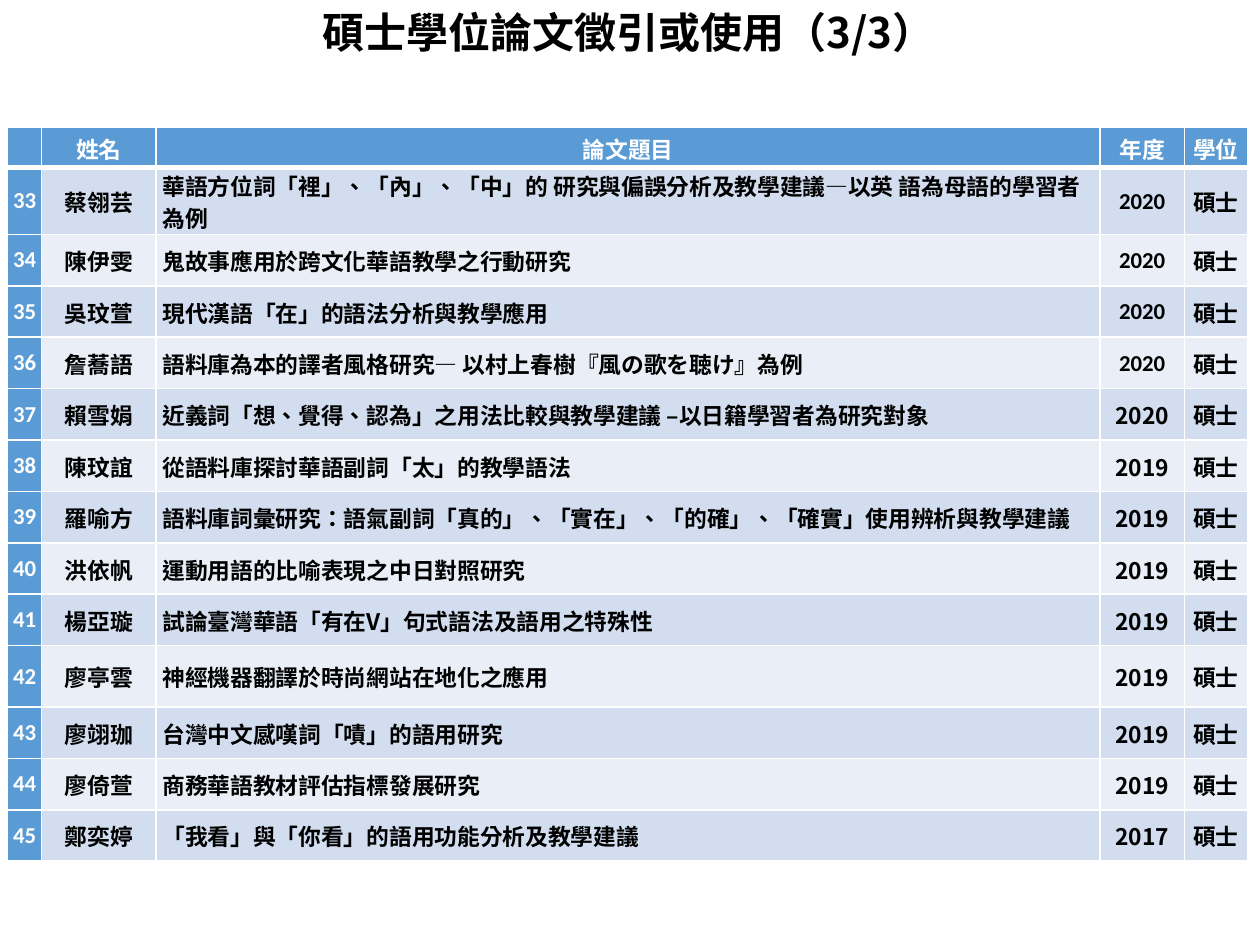
from dataclasses import dataclass

from lxml.etree import SubElement
from pptx import Presentation
from pptx.dml.color import RGBColor
from pptx.enum.text import MSO_ANCHOR, PP_ALIGN
from pptx.oxml.ns import qn
from pptx.util import Inches, Pt


@dataclass(frozen=True)
class Theme:
    head: str = "5B9BD5"
    bands: tuple = ("D2DEEF", "EAEFF7")
    white: str = "FFFFFF"
    black: str = "000000"
    han: str = "Noto Sans CJK SC"
    latin: str = "Calibri"
    lang: str = "zh-TW"
    title: int = 24
    body: int = 13
    rule: int = 1
    thick: int = 3


THEME = Theme()
WIDE, HIGH = Inches(10), Inches(7.5)

# Boxes are shares of the slide: left, top, width, height
TITLE_BOX = (0.246, 0, 0.523, 0.067)
TABLE_BOX = (0.006, 0.135, 0.984, 0.772)

COLS = (0.27, 0.91, 7.49, 0.67, 0.5)
ROW, TALL = 0.41, {0: 0.32, 1: 0.5, 10: 0.49}

HEADS = ("", "姓名", "論文題目", "年度", "學位")
FIRST, DEGREE = 33, "碩士"
LAST_LATIN = 36  # years up to this entry are set in the Latin font
THESES = (
    ("蔡翎芸", "華語方位詞「裡」、「內」、「中」的 研究與偏誤分析及教學建議—以英 語為母語的學習者為例", 2020),
    ("陳伊雯", "鬼故事應用於跨文化華語教學之行動研究", 2020),
    ("吳玟萱", "現代漢語「在」的語法分析與教學應用", 2020),
    ("詹蕎語", "語料庫為本的譯者風格研究— 以村上春樹『風の歌を聴け』為例", 2020),
    ("賴雪娟", "近義詞「想、覺得、認為」之用法比較與教學建議 –以日籍學習者為研究對象", 2020),
    ("陳玟誼", "從語料庫探討華語副詞「太」的教學語法", 2019),
    ("羅喻方", "語料庫詞彙研究：語氣副詞「真的」、「實在」、「的確」、「確實」使用辨析與教學建議", 2019),
    ("洪依帆", "運動用語的比喻表現之中日對照研究", 2019),
    ("楊亞璇", "試論臺灣華語「有在V」句式語法及語用之特殊性", 2019),
    ("廖亭雲", "神經機器翻譯於時尚網站在地化之應用", 2019),
    ("廖翊珈", "台灣中文感嘆詞「嘖」的語用研究", 2019),
    ("廖倚萱", "商務華語教材評估指標發展研究", 2019),
    ("鄭奕婷", "「我看」與「你看」的語用功能分析及教學建議", 2017),
)


def place(box):
    left, top, width, height = box
    return int(left * WIDE), int(top * HIGH), int(width * WIDE), int(height * HIGH)


def write(frame, text, size=THEME.body, font=THEME.han, color=THEME.black,
          align=PP_ALIGN.CENTER):
    para = frame.paragraphs[0]
    para.alignment = align
    if not text:
        # An empty cell keeps its row low only if its end mark is small
        SubElement(para._p, qn("a:endParaRPr")).set("sz", str(size * 100))
        return
    run = para.add_run()
    run.text = text
    run.font.size, run.font.bold, run.font.name = Pt(size), True, font
    run.font.color.rgb = RGBColor.from_string(color)
    props = run._r.get_or_add_rPr()
    props.set("lang", THEME.lang)
    SubElement(props, qn("a:ea")).set("typeface", THEME.han)


def edge(cell, row):
    """Rule the four sides of a cell, thick between header and body."""
    props = cell._tc.get_or_add_tcPr()
    thick = {(0, "B"), (1, "T")}
    for spot, side in enumerate("LRTB"):
        width = THEME.thick if (row, side) in thick else THEME.rule
        line = props.makeelement(qn(f"a:ln{side}"), {"w": str(Pt(width))})
        fill = SubElement(line, qn("a:solidFill"))
        SubElement(fill, qn("a:srgbClr")).set("val", THEME.white)
        props.insert(spot, line)


def dress(cell, row, col):
    cell.vertical_anchor = MSO_ANCHOR.MIDDLE
    side = 0.04 if row == 0 else 0.05 if col else 0
    cell.margin_left = cell.margin_right = Inches(side)
    cell.margin_top = Inches(0.01 if side else 0)
    cell.margin_bottom = 0
    head = row == 0 or col == 0
    cell.fill.solid()
    cell.fill.fore_color.rgb = RGBColor.from_string(
        THEME.head if head else THEME.bands[(row - 1) % 2])
    edge(cell, row)


def draw_title(slide, box):
    frame = slide.shapes.add_textbox(*place(box)).text_frame
    frame.word_wrap = False
    write(frame, "碩士學位論文徵引或使用（3/3）", size=THEME.title,
          align=PP_ALIGN.LEFT)


def draw_table(slide, box):
    rows = [HEADS] + [
        (str(num), name, topic, str(year), DEGREE)
        for num, (name, topic, year) in enumerate(THESES, FIRST)
    ]
    left, top, width, height = place(box)
    table = slide.shapes.add_table(
        len(rows), len(COLS), left, top, width, height).table
    table.horz_banding = False
    for col, share in zip(table.columns, COLS):
        col.width = int(width * share / sum(COLS))
    highs = [TALL.get(i, ROW) for i in range(len(rows))]
    for row, share in zip(table.rows, highs):
        row.height = int(height * share / sum(highs))

    for i, texts in enumerate(rows):
        for j, text in enumerate(texts):
            cell = table.cell(i, j)
            dress(cell, i, j)
            early = j == 3 and 0 < i <= LAST_LATIN - FIRST + 1
            write(cell.text_frame, text,
                  font=THEME.latin if j == 0 or early else THEME.han,
                  color=THEME.white if i == 0 or j == 0 else THEME.black,
                  align=PP_ALIGN.LEFT if i and j == 2 else PP_ALIGN.CENTER)


def main():
    deck = Presentation()
    deck.slide_width, deck.slide_height = WIDE, HIGH
    slide = deck.slides.add_slide(deck.slide_layouts[6])
    draw_table(slide, TABLE_BOX)
    draw_title(slide, TITLE_BOX)
    deck.save("out.pptx")


if __name__ == "__main__":
    main()
